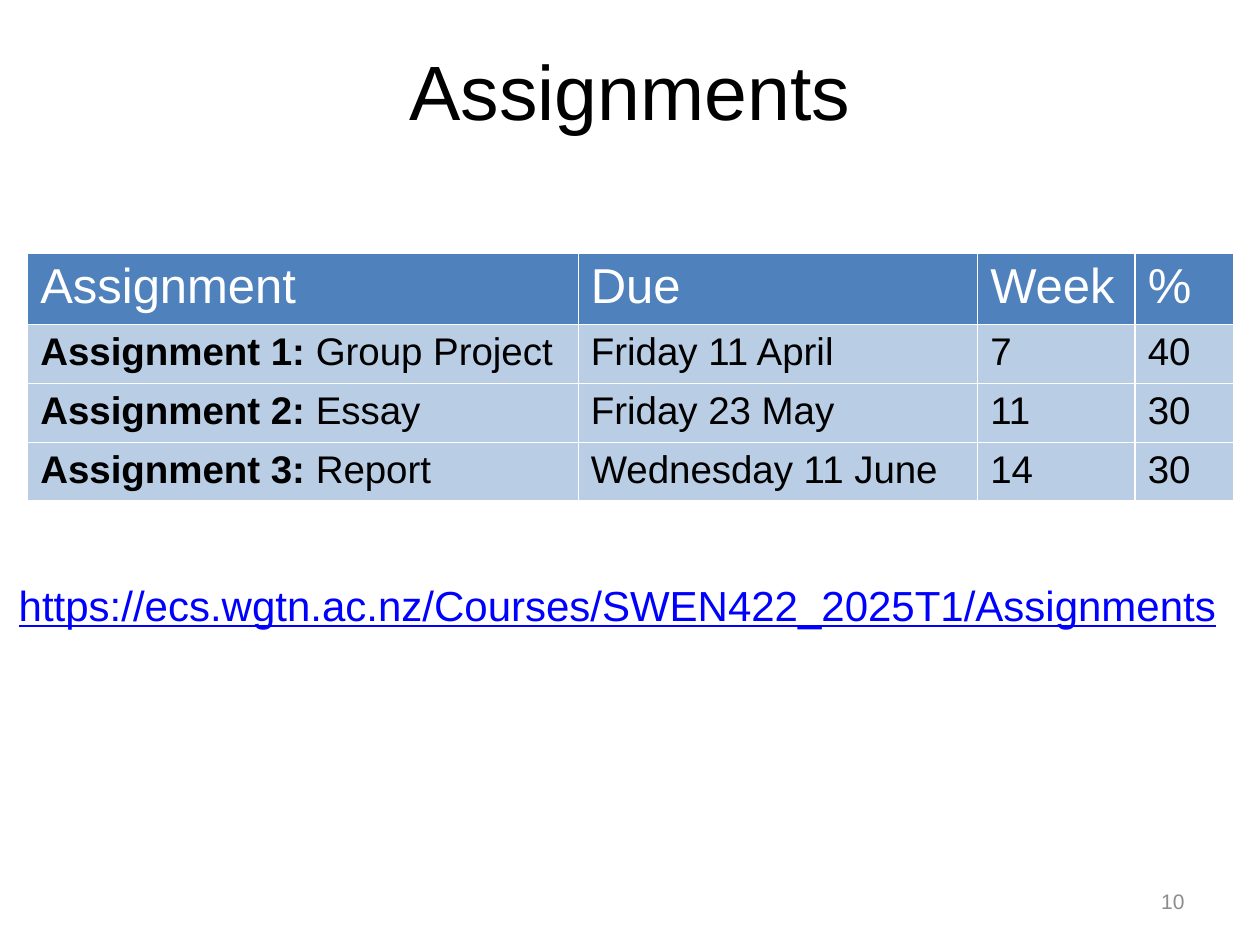
import pptx
import pptx.dml.color
import pptx.enum.text
import pptx.oxml
import pptx.oxml.ns
import pptx.util

WIDTH, HEIGHT = 10, 7.5
FONT = "Arial"
COLORS = {
    "text": "000000",
    "header": "4F81BD",
    "body": "B9CDE5",
    "white": "FFFFFF",
    "link": "0000FF",
    "number": "8C8C8C",
}
COLUMNS = [4.37, 3.17, 1.25, 0.78]
HEADER_HEIGHT, ROW_HEIGHT = 0.53, 0.44
HEADINGS = ["Assignment", "Due", "Week", "%"]
ASSIGNMENTS = [
    ("Group Project", "Friday 11 April", "7", "40"),
    ("Essay", "Friday 23 May", "11", "30"),
    ("Report", "Wednesday 11 June", "14", "30"),
]
ALIGN = pptx.enum.text.PP_ALIGN
ANCHOR = pptx.enum.text.MSO_ANCHOR


def rgb(name):
    return pptx.dml.color.RGBColor.from_string(COLORS[name])


def add_span(para, text, size, color, bold=False, underline=False):
    span = para.add_run()
    span.text = text
    span.font.name = FONT
    span.font.size = pptx.util.Pt(size)
    span.font.color.rgb = rgb(color)
    span.font.bold = bold
    span.font.underline = underline


def add_text(page, area, text, size, color, align=ALIGN.LEFT,
             anchor=ANCHOR.TOP, underline=False):
    box = page.shapes.add_textbox(*[pptx.util.Inches(length) for length in area])
    frame = box.text_frame
    frame.word_wrap = True
    frame.vertical_anchor = anchor
    para = frame.paragraphs[0]
    para.alignment = align
    add_span(para, text, size, color, underline=underline)


def add_borders(cell):
    properties = cell._tc.get_or_add_tcPr()
    for index, side in enumerate(["lnL", "lnR", "lnT", "lnB"]):
        # Border lines must come before the fill
        properties.insert(index, pptx.oxml.parse_xml(
            f'<a:{side} {pptx.oxml.ns.nsdecls("a")} w="{pptx.util.Pt(1)}">'
            f'<a:solidFill><a:srgbClr val="{COLORS["white"]}"/></a:solidFill>'
            f'</a:{side}>'))


def fill_cell(cell, spans, size, color, fill):
    cell.fill.solid()
    cell.fill.fore_color.rgb = rgb(fill)
    add_borders(cell)
    for text, bold in spans:
        add_span(cell.text_frame.paragraphs[0], text, size, color, bold)


def add_schedule(page, left, top):
    heights = [HEADER_HEIGHT] + [ROW_HEIGHT] * len(ASSIGNMENTS)
    area = [left, top, sum(COLUMNS), sum(heights)]
    table = page.shapes.add_table(
        len(heights), len(COLUMNS),
        *[pptx.util.Inches(length) for length in area]).table
    for column, width in zip(table.columns, COLUMNS):
        column.width = pptx.util.Inches(width)
    for row, height in zip(table.rows, heights):
        row.height = pptx.util.Inches(height)

    # Heading row
    for column, heading in enumerate(HEADINGS):
        fill_cell(table.cell(0, column), [(heading, False)], 28, "white", "header")

    # One row per assignment, numbered in bold
    for number, (topic, *details) in enumerate(ASSIGNMENTS, 1):
        name = [(f"Assignment {number}: ", True), (topic, False)]
        row = [name] + [[(detail, False)] for detail in details]
        for column, spans in enumerate(row):
            fill_cell(table.cell(number, column), spans, 22, "text", "body")


def main():
    deck = pptx.Presentation()
    deck.slide_width = pptx.util.Inches(WIDTH)
    deck.slide_height = pptx.util.Inches(HEIGHT)
    page = deck.slides.add_slide(deck.slide_layouts[6])
    margin = WIDTH * 0.05

    # Title
    add_text(page, (margin, 0.25, WIDTH - 2 * margin, 0.93), "Assignments",
             44, "text", ALIGN.CENTER, ANCHOR.MIDDLE)
    # Due dates and weights
    add_schedule(page, 0.22, 2.01)
    # Web address
    add_text(page, (0.05, 4.55, 9.89, 0.5),
             "https://ecs.wgtn.ac.nz/Courses/SWEN422_2025T1/Assignments",
             24, "link", underline=True)
    # Page number
    add_text(page, (WIDTH - margin - 2.33, 6.95, 2.33, 0.4), "10",
             12, "number", ALIGN.RIGHT, ANCHOR.MIDDLE)

    deck.save("out.pptx")


if __name__ == "__main__":
    main()
